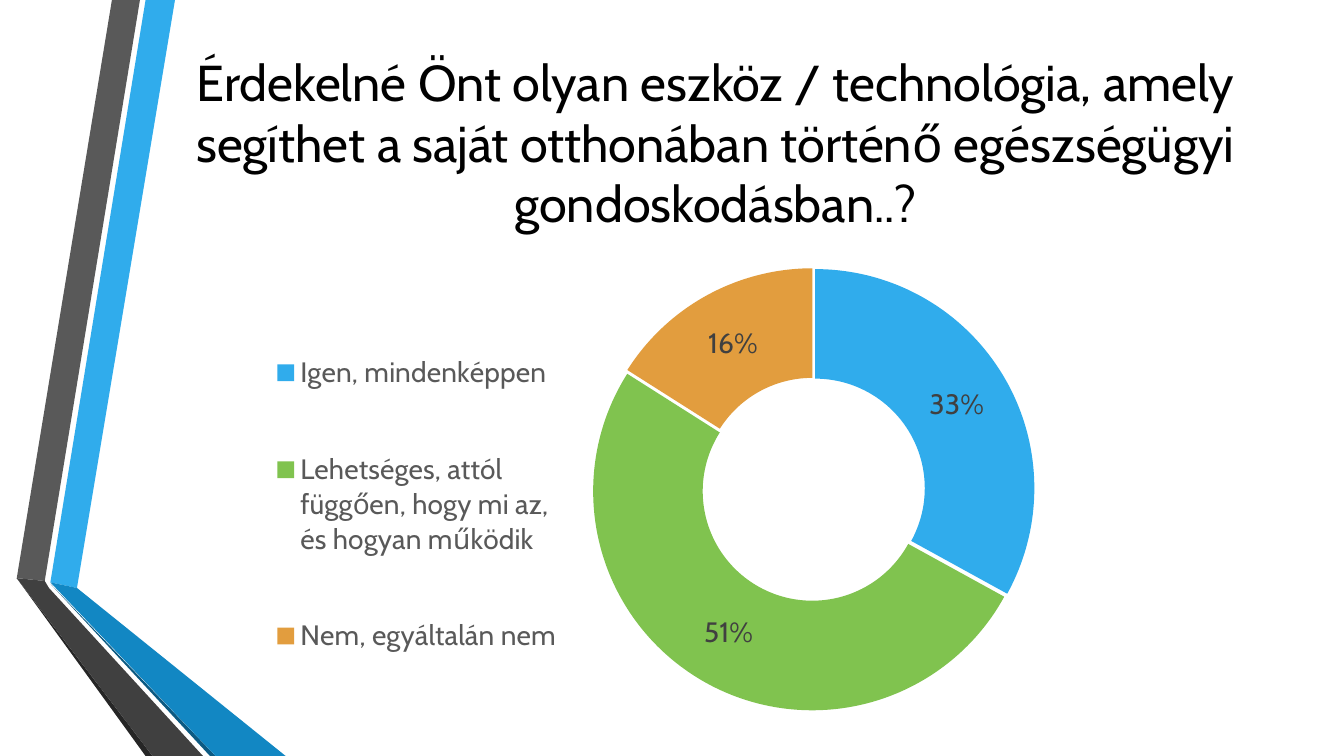
from dataclasses import dataclass

from lxml import etree
from pptx import Presentation
from pptx.chart.data import CategoryChartData
from pptx.dml.color import RGBColor
from pptx.enum.chart import XL_CHART_TYPE, XL_LEGEND_POSITION
from pptx.enum.text import MSO_ANCHOR, PP_ALIGN
from pptx.oxml.ns import qn
from pptx.util import Pt

DOUGHNUT = XL_CHART_TYPE.DOUGHNUT
LEGEND_BOTTOM = XL_LEGEND_POSITION.BOTTOM
MIDDLE = MSO_ANCHOR.MIDDLE
CENTER = PP_ALIGN.CENTER


@dataclass(frozen=True)
class Theme:
    font: str = "Cabin"
    title_size: float = 36
    chart_size: float = 20
    title: str = "000000"
    legend: str = "595959"
    label: str = "404040"
    blue: str = "30ACEC"
    blue_dark: str = "1287C3"
    blue_edge: str = "0C5A82"
    gray: str = "595959"
    gray_dark: str = "404040"
    gray_edge: str = "262626"
    green: str = "80C34F"
    orange: str = "E29D3E"


@dataclass(frozen=True)
class Box:
    left: float
    top: float
    width: float
    height: float


@dataclass(frozen=True)
class Ribbon:
    color: str
    corners: tuple[tuple[float, float], ...]


@dataclass(frozen=True)
class Answer:
    text: str
    percent: int
    color: str


THEME = Theme()
WIDTH, HEIGHT = 960, 540
TITLE = ("Érdekelné Önt olyan eszköz / technológia, amely segíthet a saját "
         "otthonában történő egészségügyi gondoskodásban..?")
TITLE_BOX = Box(116.6, 54, 789.1, 138.2)
TITLE_BOTTOM_INSET = 46.8
CHART_BOX = Box(194.4, 180.7, 765.6, 359.3)
# Fractions of the chart area
PLOT_AREA = Box(0.25, 0.03, 0.51, 0.88)
LEGEND_AREA = Box(0, 0.08, 0.27, 0.84)
HOLE_PERCENT = 75
EXPLOSION_PERCENT = 2

RIBBONS = (
    Ribbon(THEME.blue, ((36, 416.2), (55.4, 419.8), (124.6, 0), (104.4, 0))),
    Ribbon(THEME.gray, ((100.1, 0), (79.9, 0), (11.5, 412.6), (31.7, 415.4))),
    Ribbon(THEME.gray_edge, ((11.5, 412.6), (104.4, HEIGHT), (108.7, HEIGHT))),
    Ribbon(THEME.blue_edge, ((36, 416.9), (149.8, HEIGHT), (154.1, HEIGHT))),
    Ribbon(THEME.blue_dark,
           ((36, 416.2), (154.1, HEIGHT), (203.8, HEIGHT), (55.4, 419.8))),
    Ribbon(THEME.gray_dark,
           ((145.4, HEIGHT), (34.6, 419.8), (31.7, 415.4), (11.5, 412.6),
            (108.7, HEIGHT))),
)

ANSWERS = (
    Answer("Igen, mindenképpen", 33, THEME.blue),
    Answer("Lehetséges, attól függően, hogy mi az, és hogyan működik", 51,
           THEME.green),
    Answer("Nem, egyáltalán nem", 16, THEME.orange),
)


def to_points(box: Box) -> tuple[Pt, Pt, Pt, Pt]:
    return Pt(box.left), Pt(box.top), Pt(box.width), Pt(box.height)


def set_font(font, size: float, color: str) -> None:
    font.name = THEME.font
    font.size = Pt(size)
    font.color.rgb = RGBColor.from_string(color)


def draw_ribbon(slide, ribbon: Ribbon) -> None:
    start, *rest = ribbon.corners
    builder = slide.shapes.build_freeform(*start, scale=Pt(1))
    builder.add_line_segments(rest, close=True)
    shape = builder.convert_to_shape()
    shape.shadow.inherit = False
    shape.fill.solid()
    shape.fill.fore_color.rgb = RGBColor.from_string(ribbon.color)
    shape.line.fill.background()


def draw_title(slide) -> None:
    text_frame = slide.shapes.add_textbox(*to_points(TITLE_BOX)).text_frame
    text_frame.word_wrap = True
    text_frame.vertical_anchor = MIDDLE
    text_frame.margin_bottom = Pt(TITLE_BOTTOM_INSET)
    paragraph = text_frame.paragraphs[0]
    paragraph.text = TITLE
    paragraph.alignment = CENTER
    set_font(paragraph.font, THEME.title_size, THEME.title)


def make_layout(area: Box, inner: bool = False):
    """Return a c:layout element that fixes an area inside the chart."""
    layout = etree.Element(qn("c:layout"))
    manual = etree.SubElement(layout, qn("c:manualLayout"))
    settings = [("layoutTarget", "inner")] if inner else []
    settings += [("xMode", "edge"), ("yMode", "edge"),
                 ("x", area.left), ("y", area.top),
                 ("w", area.width), ("h", area.height)]
    for name, value in settings:
        etree.SubElement(manual, qn(f"c:{name}"), val=str(value))
    return layout


def place_chart_parts(chart) -> None:
    """Fix the plot and legend areas, which python-pptx cannot position."""
    plot_area = chart._chartSpace.find(f".//{qn('c:plotArea')}")
    legend = chart._chartSpace.find(f".//{qn('c:legend')}")
    for parent in (plot_area, legend):
        for layout in parent.findall(qn("c:layout")):
            parent.remove(layout)
    plot_area.insert(0, make_layout(PLOT_AREA, inner=True))
    legend.find(qn("c:legendPos")).addnext(make_layout(LEGEND_AREA))


def shape_ring(plot, series) -> None:
    """Set the hole size and the gap between the slices."""
    ring = plot._element
    hole = ring.find(qn("c:holeSize"))
    if hole is None:
        hole = etree.SubElement(ring, qn("c:holeSize"))
    hole.set("val", str(HOLE_PERCENT))
    explosion = etree.Element(qn("c:explosion"), val=str(EXPLOSION_PERCENT))
    series._element.find(qn("c:spPr")).addnext(explosion)


def draw_chart(slide) -> None:
    data = CategoryChartData()
    data.categories = [answer.text for answer in ANSWERS]
    data.add_series("Series 1", [answer.percent for answer in ANSWERS])
    chart = slide.shapes.add_chart(DOUGHNUT, *to_points(CHART_BOX), data).chart
    set_font(chart.font, THEME.chart_size, THEME.label)
    chart.has_title = False
    chart.has_legend = True
    chart.legend.position = LEGEND_BOTTOM
    chart.legend.include_in_layout = False
    set_font(chart.legend.font, THEME.chart_size, THEME.legend)

    plot = chart.plots[0]
    plot.vary_by_categories = True
    plot.has_data_labels = True
    labels = plot.data_labels
    labels.show_percentage = True
    labels.show_value = False
    labels.number_format = "0%"
    labels.number_format_is_linked = False
    set_font(labels.font, THEME.chart_size, THEME.label)

    series = plot.series[0]
    series.format.line.fill.background()
    shape_ring(plot, series)
    for index, answer in enumerate(ANSWERS):
        slice_format = series.points[index].format
        slice_format.fill.solid()
        slice_format.fill.fore_color.rgb = RGBColor.from_string(answer.color)
        slice_format.line.fill.background()
    place_chart_parts(chart)


def main() -> None:
    presentation = Presentation()
    presentation.slide_width, presentation.slide_height = Pt(WIDTH), Pt(HEIGHT)
    slide = presentation.slides.add_slide(presentation.slide_layouts[6])
    for ribbon in RIBBONS:
        draw_ribbon(slide, ribbon)
    draw_title(slide)
    draw_chart(slide)
    presentation.save("out.pptx")


if __name__ == "__main__":
    main()
